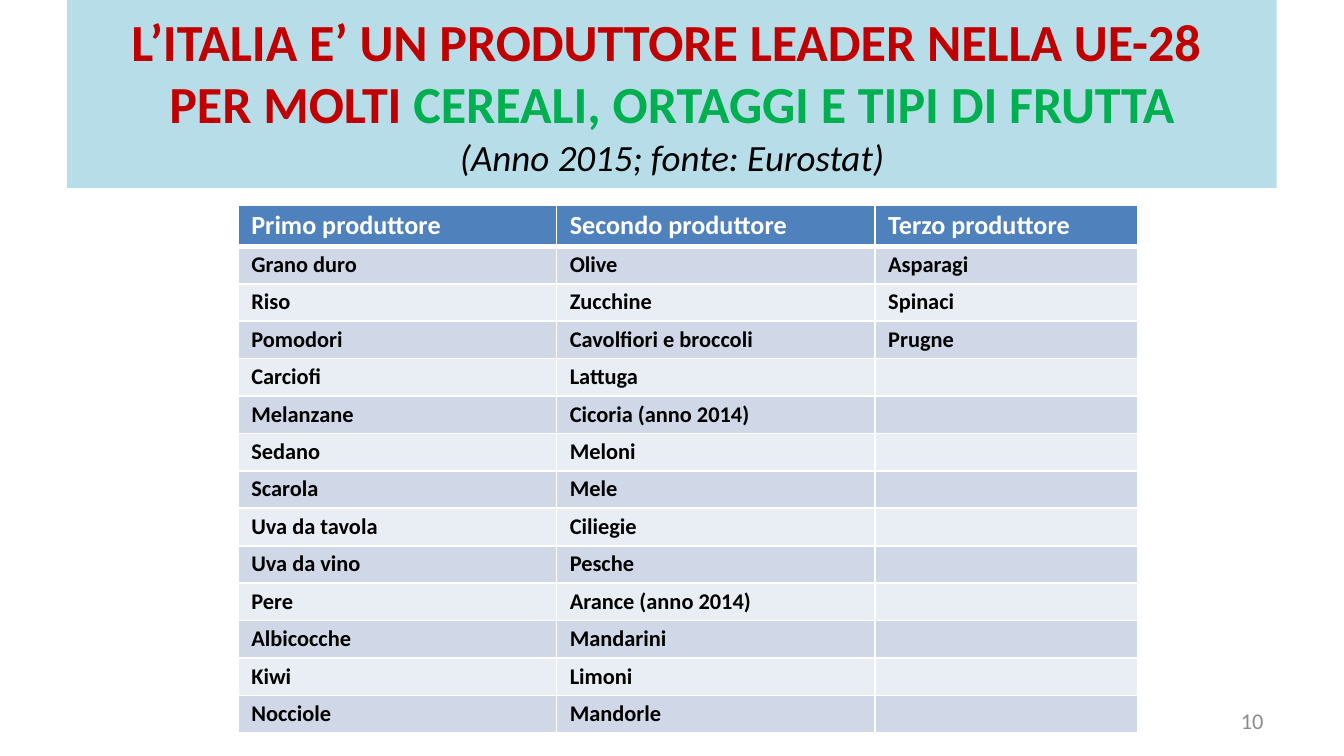
from itertools import zip_longest
from lxml.etree import SubElement
from pptx import Presentation
from pptx.dml.color import RGBColor
from pptx.enum.shapes import MSO_SHAPE as Shape
from pptx.enum.text import MSO_ANCHOR as Anchor, PP_ALIGN as Align
from pptx.oxml.ns import qn
from pptx.util import Cm, Pt

FONT = "Calibri"
FIRST = ["Primo produttore", "Grano duro", "Riso", "Pomodori", "Carciofi",
         "Melanzane", "Sedano", "Scarola", "Uva da tavola", "Uva da vino",
         "Pere", "Albicocche", "Kiwi", "Nocciole"]
SECOND = ["Secondo produttore", "Olive", "Zucchine", "Cavolfiori e broccoli",
          "Lattuga", "Cicoria (anno 2014)", "Meloni", "Mele", "Ciliegie",
          "Pesche", "Arance (anno 2014)", "Mandarini", "Limoni", "Mandorle"]
THIRD = ["Terzo produttore", "Asparagi", "Spinaci", "Prugne"]


def rgb(value):
    return RGBColor.from_string(value)


def add_text(p, text, size, color="000000", bold=False, italic=False):
    for i, line in enumerate(text.split("\n")):
        if i:
            p.add_line_break()
        if line:
            r = p.add_run()
            r.text = line
            r.font.name = FONT
            r.font.size = Pt(size)
            r.font.bold = bold
            r.font.italic = italic
            r.font.color.rgb = rgb(color)


def add_title(s, x, y, w, h):
    sp = s.shapes.add_shape(Shape.RECTANGLE, Cm(x), Cm(y), Cm(w), Cm(h))
    sp.shadow.inherit = False
    sp.fill.solid()
    sp.fill.fore_color.rgb = rgb("B7DEE8")
    sp.line.fill.background()
    tf = sp.text_frame
    tf.word_wrap = True
    tf.vertical_anchor = Anchor.MIDDLE
    p = tf.paragraphs[0]
    p.alignment = Align.CENTER
    add_text(p, "L’ITALIA E’ UN PRODUTTORE LEADER NELLA UE-28 \nPER MOLTI ",
             27.9, color="C00000", bold=True)
    add_text(p, "CEREALI, ORTAGGI E TIPI DI FRUTTA\n", 27.9,
             color="00B050", bold=True)
    add_text(p, "(Anno 2015; fonte: Eurostat)", 19.8, italic=True)


def set_borders(cell, **widths):
    tc_pr = cell._tc.get_or_add_tcPr()
    for side in ("L", "R", "T", "B"):
        ln = SubElement(tc_pr, qn(f"a:ln{side}"), w=str(Pt(widths.get(side, 1))))
        fill = SubElement(ln, qn("a:solidFill"))
        SubElement(fill, qn("a:srgbClr"), val="FFFFFF")


def fill_cell(cell, text, row):
    cell.margin_left = cell.margin_right = Cm(0.25)
    cell.margin_top = cell.margin_bottom = Cm(0.09)
    set_borders(cell, T=3 if row == 1 else 1, B=3 if row == 0 else 1)
    cell.fill.solid()
    band = "D0D8E8" if row % 2 else "E9EDF4"
    cell.fill.fore_color.rgb = rgb(band if row else "4F81BD")
    p = cell.text_frame.paragraphs[0]
    if text:
        add_text(p, text, 12 if row else 14,
                 color="000000" if row else "FFFFFF", bold=True)
    else:
        SubElement(p._p, qn("a:endParaRPr"), sz="1200")


def add_producers(s, x, y, w, h):
    rows = list(zip_longest(FIRST, SECOND, THIRD, fillvalue=""))
    header_h = 0.76
    row_h = (h - header_h) / (len(rows) - 1)
    table = s.shapes.add_table(len(rows), 3, Cm(x), Cm(y), Cm(w), Cm(h)).table
    for col, share in zip(table.columns, (0.354, 0.354, 0.292)):
        col.width = Cm(w * share)
    for i, texts in enumerate(rows):
        table.rows[i].height = Cm(row_h if i else header_h)
        for j, text in enumerate(texts):
            fill_cell(table.cell(i, j), text, i)


def add_page_number(s, x, y, w, h):
    tf = s.shapes.add_textbox(Cm(x), Cm(y), Cm(w), Cm(h)).text_frame
    tf.word_wrap = True
    tf.vertical_anchor = Anchor.MIDDLE
    p = tf.paragraphs[0]
    p.alignment = Align.RIGHT
    add_text(p, "10", 12, color="8C8C8C")


def main():
    prs = Presentation()
    prs.slide_width, prs.slide_height = Cm(25.4), Cm(14.28)
    s = prs.slides.add_slide(prs.slide_layouts[6])
    add_title(s, 1.27, 0, 22.86, 3.55)
    add_producers(s, 4.5, 3.87, 17, 9.96)
    add_page_number(s, 18.2, 13.24, 5.93, 0.76)
    prs.save("out.pptx")


if __name__ == "__main__":
    main()
